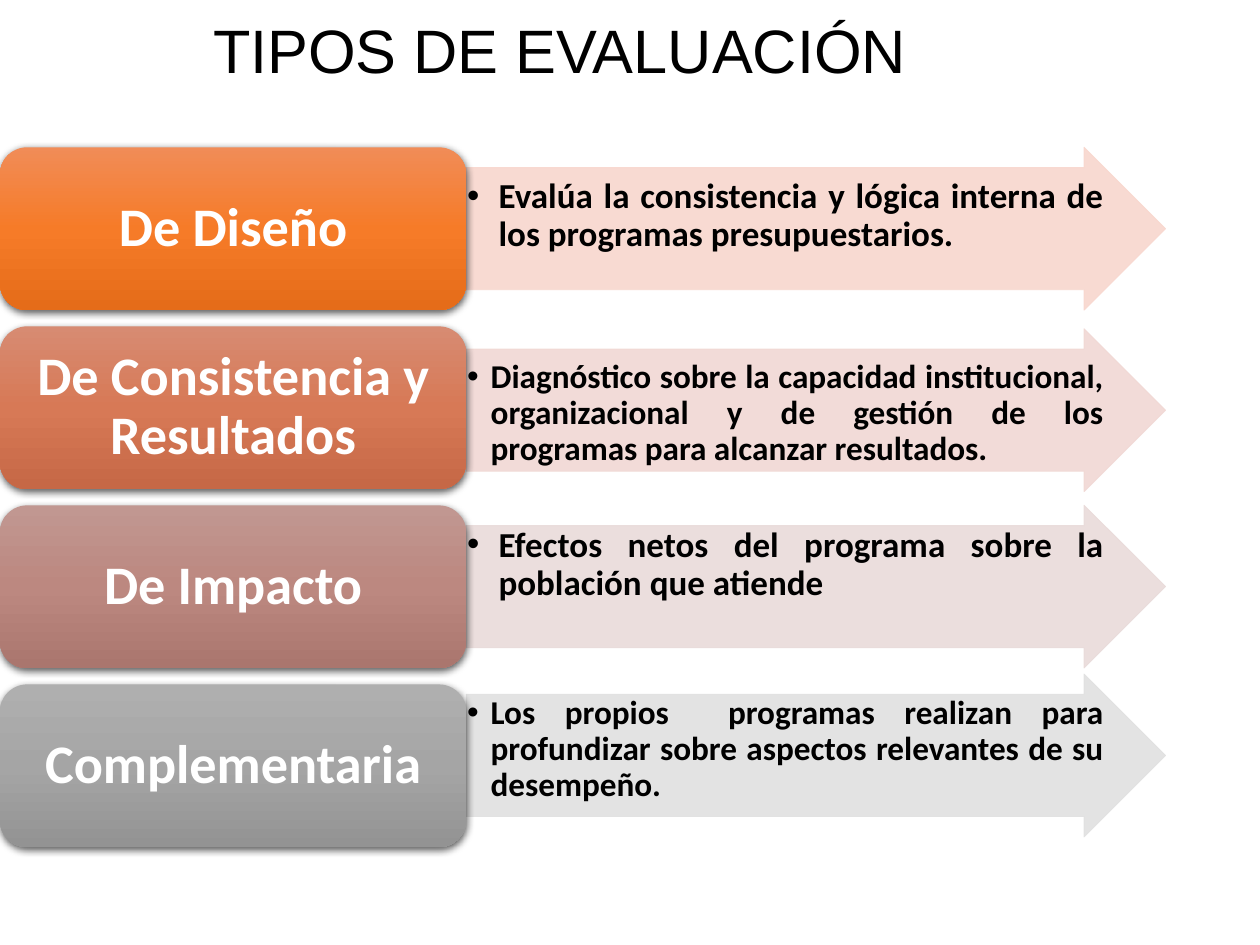
from lxml.etree import SubElement
from pptx import Presentation
from pptx.dml.color import RGBColor
from pptx.enum.shapes import MSO_SHAPE
from pptx.enum.text import MSO_ANCHOR, MSO_AUTO_SIZE, PP_ALIGN
from pptx.oxml.ns import qn
from pptx.util import Pt

# Content: label, description, description size, indent, arrow top, text inset
TITLE = "TIPOS DE EVALUACIÓN"
ROWS = [
    ("De Diseño",
     "Evalúa la consistencia y lógica interna de los programas presupuestarios.",
     20, 18, 84.2, 6.3),
    ("De Consistencia y Resultados",
     "Diagnóstico sobre la capacidad institucional, organizacional y de gestión "
     "de los programas para alcanzar resultados.",
     19, 13.5, 187.9, 6.3),
    ("De Impacto",
     "Efectos netos del programa sobre la población que atiende",
     20, 18, 288.7, 0.8),
    ("Complementaria",
     "Los propios  programas realizan para profundizar sobre aspectos relevantes "
     "de su desempeño.",
     19, 13.5, 385.2, 0.8),
]
COLORS = {
    "text": "000000",
    "label": "FFFFFF",
    "arrows": ["F8D7CE", "F1D8D4", "E9DBDA", "E1E1E1"],
    "boxes": [("F18C57", "F67B28", "E56C19"), ("D78B72", "D77956", "C66846"),
              ("C19791", "BC8880", "AA766E"), ("AFAFAF", "A5A5A5", "939393")],
}

# Layout in points
BOX_W, ROW_H, ARROW_W = 266.4, 93, 399.6
FIRST_TOP, PITCH = 84.2, 102.3


def add_color(parent, color, alpha=None):
    clr = SubElement(parent, qn("a:srgbClr"), val=color)
    if alpha is not None:
        SubElement(clr, qn("a:alpha"), val=str(alpha * 1000))


def add_shadow(effects, blur, dist, angle, alpha):
    shadow = SubElement(effects, qn("a:outerShdw"), blurRad=str(Pt(blur)),
                        dist=str(Pt(dist)), dir=str(angle * 60000),
                        algn="ctr", rotWithShape="0")
    add_color(shadow, COLORS["text"], alpha)


def set_gradient(sp, colors):
    sp.fill.gradient()
    sp.fill.gradient_angle = 270
    stops = sp._element.spPr.find(qn("a:gradFill")).find(qn("a:gsLst"))
    for stop in list(stops):
        stops.remove(stop)
    for i, color in enumerate(colors):
        add_color(SubElement(stops, qn("a:gs"), pos=str(i * 50000)), color)


def set_insets(tf, left, top, right, bottom):
    tf.margin_left, tf.margin_top = Pt(left), Pt(top)
    tf.margin_right, tf.margin_bottom = Pt(right), Pt(bottom)
    tf.word_wrap = True


def write(tf, text, font, size, color, align, bold=False):
    p = tf.paragraphs[0]
    p.alignment = align
    r = p.add_run()
    r.text = text
    r.font.name, r.font.size, r.font.bold = font, Pt(size), bold
    r.font.color.rgb = RGBColor.from_string(color)
    return p, r


def add_arrow(s, top, color, text, size, indent, inset):
    sp = s.shapes.add_shape(MSO_SHAPE.RIGHT_ARROW, Pt(BOX_W), Pt(top),
                            Pt(ARROW_W), Pt(ROW_H))
    sp.adjustments[0], sp.adjustments[1] = 0.75, 0.5
    sp.shadow.inherit = False
    sp.line.width = Pt(0.5)
    for fill in (sp.fill, sp.line.fill):
        fill.solid()
        fill.fore_color.rgb = RGBColor.from_string(color)
    for clr in sp._element.spPr.iter(qn("a:srgbClr")):
        SubElement(clr, qn("a:alpha"), val="90000")
    tf = sp.text_frame
    set_insets(tf, 0.5, inset, 0.5, 0)
    tf.vertical_anchor = MSO_ANCHOR.TOP
    p, r = write(tf, text, "Calibri", size, COLORS["text"], PP_ALIGN.JUSTIFY, True)
    p.line_spacing = 0.9
    pPr = p._p.get_or_add_pPr()
    pPr.set("marL", str(Pt(indent)))
    pPr.set("indent", str(-Pt(indent)))
    SubElement(pPr, qn("a:buFont"), typeface="Arial")
    SubElement(pPr, qn("a:buChar"), char="•")


def add_box(s, top, colors, text):
    sp = s.shapes.add_shape(MSO_SHAPE.ROUNDED_RECTANGLE, 0, Pt(top),
                            Pt(BOX_W), Pt(ROW_H))
    set_gradient(sp, colors)
    sp.line.fill.background()
    sp.shadow.inherit = False
    add_shadow(sp._element.spPr.find(qn("a:effectLst")), 4.5, 1.5, 90, 63)
    tf = sp.text_frame
    set_insets(tf, 9.4, 4.7, 9.4, 4.7)
    tf.vertical_anchor = MSO_ANCHOR.MIDDLE
    p, r = write(tf, text, "Calibri", 31, COLORS["label"], PP_ALIGN.CENTER, True)
    p.line_spacing = 0.9


def main():
    prs = Presentation()
    prs.slide_width, prs.slide_height = Pt(720), Pt(540)
    s = prs.slides.add_slide(prs.slide_layouts[5])

    # Title with a soft text shadow
    title = s.shapes.title
    title.left, title.top, title.width, title.height = Pt(36.7), Pt(0.7), Pt(566.6), Pt(54.7)
    tf = title.text_frame
    set_insets(tf, 7.2, 3.6, 7.2, 3.6)
    tf.auto_size = MSO_AUTO_SIZE.NONE
    tf.vertical_anchor = MSO_ANCHOR.MIDDLE
    p, r = write(tf, TITLE, "Arial", 35, COLORS["text"], PP_ALIGN.CENTER)
    effects = r.font._element.makeelement(qn("a:effectLst"))
    r.font._element.find(qn("a:solidFill")).addnext(effects)
    add_shadow(effects, 3, 3, 45, 43)

    # One arrow and one label box per evaluation type
    for i, (label, text, size, indent, top, inset) in enumerate(ROWS):
        add_arrow(s, top, COLORS["arrows"][i], text, size, indent, inset)
        add_box(s, FIRST_TOP + i * PITCH, COLORS["boxes"][i], label)

    prs.save("out.pptx")


if __name__ == "__main__":
    main()
